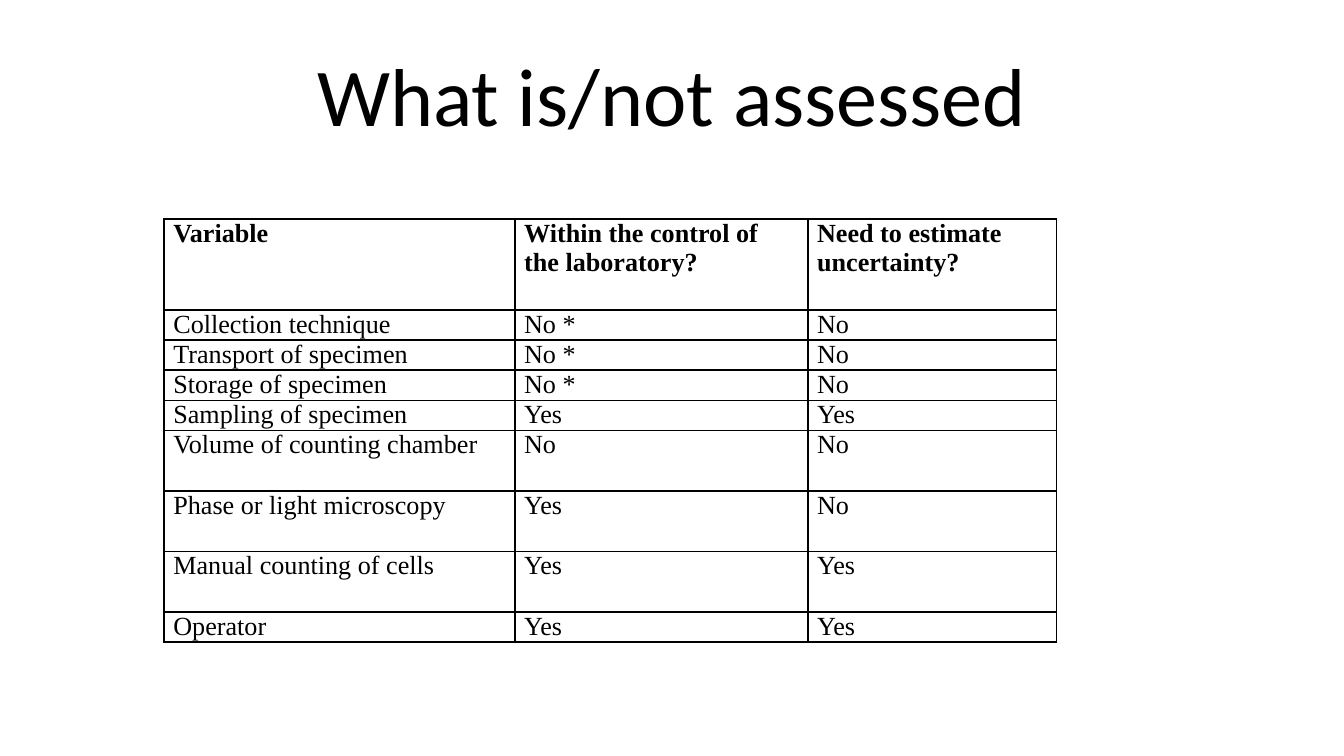
from dataclasses import dataclass
from lxml.etree import SubElement
from pptx import Presentation
from pptx.dml.color import RGBColor
from pptx.enum.text import MSO_ANCHOR, PP_ALIGN
from pptx.oxml.ns import qn
from pptx.util import Inches, Pt

# Content
TITLE = "What is/not assessed"
HEADER = ("Variable", "Within the control of the laboratory?", "Need to estimate uncertainty?")
# Height of each row in text lines, then its cells
ROWS = [
    (3, HEADER),
    (1, ("Collection technique", "No *", "No")),
    (1, ("Transport of specimen", "No *", "No")),
    (1, ("Storage of specimen", "No *", "No")),
    (1, ("Sampling of specimen", "Yes", "Yes")),
    (2, ("Volume of counting chamber", "No", "No")),
    (2, ("Phase or light microscopy", "Yes", "No")),
    (2, ("Manual counting of cells", "Yes", "Yes")),
    (1, ("Operator", "Yes", "Yes")),
]
COL_WIDTHS = (2.61, 2.18, 1.85)
TABLE_HEIGHT = 3.15


@dataclass(frozen=True)
class Theme:
    ink: str = "000000"
    title_font: str = "Calibri"
    title_size: int = 44
    table_font: str = "Times New Roman"
    table_size: int = 14
    border: int = 1


theme = Theme()


def add_text(p, text, font, size, bold=False):
    r = p.add_run()
    r.text = text
    r.font.name, r.font.size, r.font.bold = font, Pt(size), bold
    r.font.color.rgb = RGBColor.from_string(theme.ink)


def add_borders(cell):
    tc_pr = cell._tc.get_or_add_tcPr()
    for side in ("lnL", "lnR", "lnT", "lnB"):
        ln = SubElement(tc_pr, qn(f"a:{side}"), w=str(Pt(theme.border)))
        fill = SubElement(ln, qn("a:solidFill"))
        SubElement(fill, qn("a:srgbClr"), val=theme.ink)


def fill_cell(cell, text, bold):
    cell.margin_left = cell.margin_right = Inches(0.07)
    cell.margin_top = cell.margin_bottom = 0
    cell.vertical_anchor = MSO_ANCHOR.TOP
    add_text(cell.text_frame.paragraphs[0], text, theme.table_font, theme.table_size, bold)
    # Borders come before the fill in the cell properties
    add_borders(cell)
    cell.fill.background()


# Widescreen slide, 16:9
prs = Presentation()
prs.slide_width = Inches(10)
prs.slide_height = prs.slide_width * 9 // 16
s = prs.slides.add_slide(prs.slide_layouts[5])

# Title
title = s.shapes.title
title.left, title.top = Inches(0.5), Inches(0.23)
title.width, title.height = Inches(9), Inches(0.94)
tf = title.text_frame
tf.vertical_anchor = MSO_ANCHOR.MIDDLE
p = tf.paragraphs[0]
p.alignment = PP_ALIGN.CENTER
add_text(p, TITLE, theme.title_font, theme.title_size)

# Table
table = s.shapes.add_table(
    len(ROWS), len(HEADER), Inches(1.22), Inches(1.63),
    Inches(sum(COL_WIDTHS)), Inches(TABLE_HEIGHT),
).table
table.first_row = table.horz_banding = False
for col, width in zip(table.columns, COL_WIDTHS):
    col.width = Inches(width)

line_height = Inches(TABLE_HEIGHT) // sum(lines for lines, _ in ROWS)
for i, (lines, texts) in enumerate(ROWS):
    table.rows[i].height = line_height * lines
    for j, text in enumerate(texts):
        fill_cell(table.cell(i, j), text, bold=i == 0)

prs.save("out.pptx")
